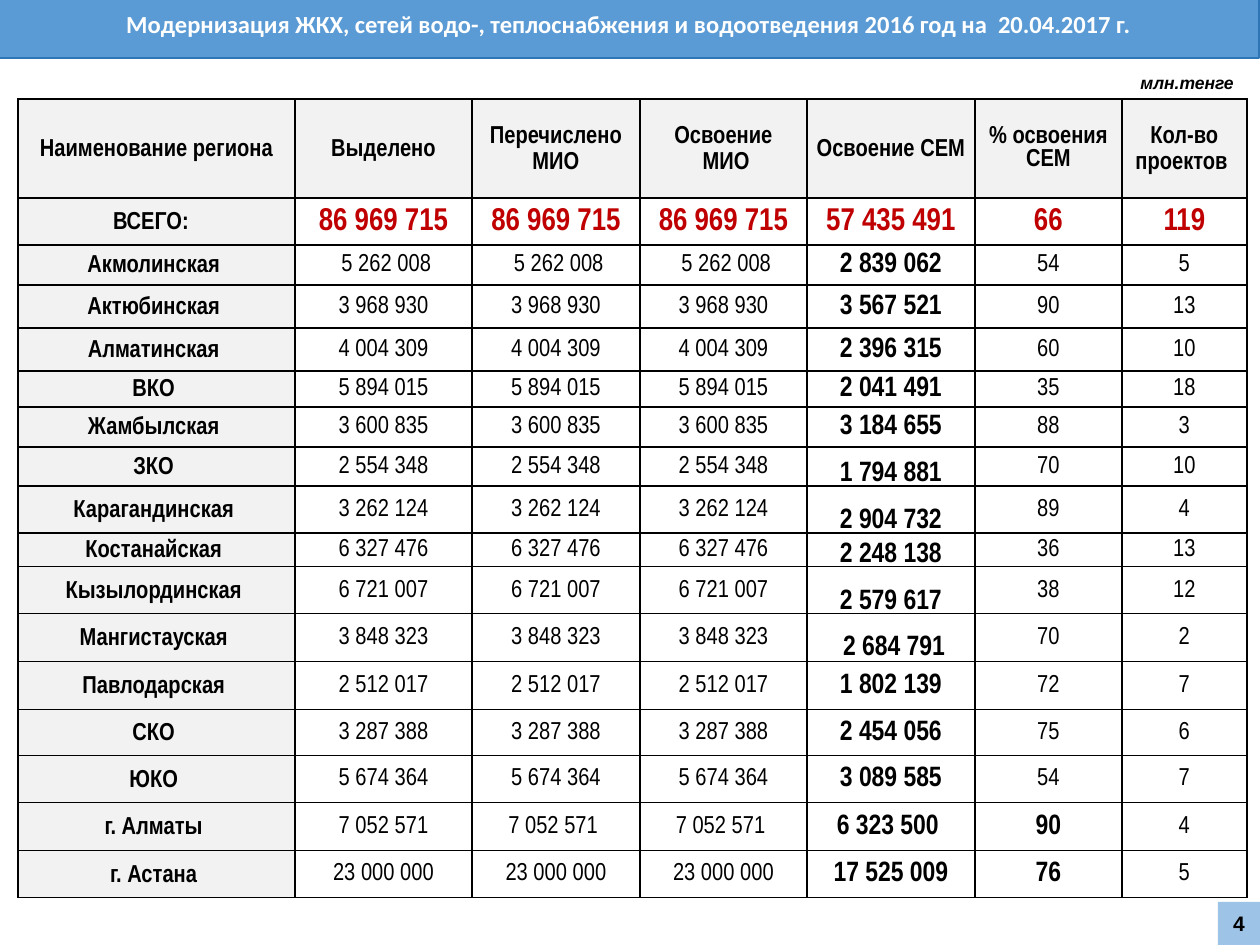
from copy import deepcopy
from dataclasses import dataclass

from lxml import etree
from pptx import Presentation, util as u
from pptx.dml.color import RGBColor
from pptx.enum import shapes, text
from pptx.oxml import ns

PX = u.Inches(1) / 126


@dataclass(frozen=True)
class Theme:
    title_fill: str = "5B9BD5"
    title_line: str = "2E75B6"
    number_fill: str = "9DC3E6"
    label_fill: str = "F2F2F2"
    white: str = "FFFFFF"
    black: str = "000000"
    red: str = "C00000"
    table_font: str = "Arial Narrow"
    note_font: str = "Arial"
    title_font: str = "Calibri"
    body: int = 14
    spent: int = 16
    total: int = 18
    number: int = 12
    note: int = 10


THEME = Theme()


@dataclass(frozen=True)
class Style:
    size: int = THEME.body
    color: str = THEME.black
    bold: bool = True
    italic: bool = False
    font: str = THEME.table_font
    fill: str = THEME.white
    line_spacing: float | None = None
    space_after: float | None = None
    inset: int = 1
    align: text.PP_ALIGN = text.PP_ALIGN.CENTER


@dataclass(frozen=True)
class Region:
    name: str
    height: int
    allocated: str
    spent: str
    percent: str
    projects: str
    transferred: str = ""
    low: bool = False         # spent amount sits at the cell bottom
    strong: bool = False      # percentage is emphasised
    tight: bool = True        # spent amount has reduced line spacing


LABEL = Style(fill=THEME.label_fill, line_spacing=1.15, inset=5)
HEADER_PLAIN = Style(fill=THEME.label_fill, inset=5)
TOTAL = Style(size=THEME.total, color=THEME.red)
VALUE = Style(bold=False)
SPENT = Style(size=THEME.spent, line_spacing=0.9, space_after=5.6)
SPENT_LOOSE = Style(size=THEME.spent)

COLUMNS = (277, 177, 168, 167, 168, 147, 125)
HEADER_HEIGHT, TOTAL_HEIGHT = 99, 47
HEADERS = ("Наименование региона", "Выделено", "Перечислено МИО", "Освоение\n МИО",
           "Освоение СЕМ", "% освоения СЕМ", "Кол-во проектов ")
TOTALS = ("86 969 715",) * 3 + ("57 435 491", "66", "119")
REGIONS = (
    Region("Акмолинская", 40, " 5 262 008", "2 839 062", "54", "5"),
    Region("Актюбинская", 43, "3 968 930", "3 567 521", "90", "13"),
    Region("Алматинская", 43, "4 004 309", "2 396 315", "60", "10"),
    Region("ВКО", 36, "5 894 015", "2 041 491", "35", "18"),
    Region("Жамбылская", 40, "3 600 835", "3 184 655", "88", "3"),
    Region("ЗКО", 39, "2 554 348", "1 794 881", "70", "10", low=True),
    Region("Карагандинская", 47, "3 262 124", "2 904 732", "89", "4", low=True),
    Region("Костанайская", 34, "6 327 476", "2 248 138", "36", "13", low=True),
    Region("Кызылординская", 47, "6 721 007", "2 579 617", "38", "12", low=True),
    Region("Мангистауская", 48, "3 848 323", " 2 684 791", "70", "2", low=True, tight=False),
    Region("Павлодарская", 48, "2 512 017", "1 802 139", "72", "7"),
    Region("СКО", 46, "3 287 388", "2 454 056", "75", "6"),
    Region("ЮКО", 47, "5 674 364", "3 089 585", "54", "7"),
    Region("г. Алматы", 48, "7 052 571", "6 323 500 ", "90", "4", "7 052 571 ", strong=True),
    Region("г. Астана", 47, "23 000 000", "17 525 009", "76", "5", strong=True),
)


def px(length: int) -> int:
    return round(length * PX)


def set_all(target, values: dict) -> None:
    for name, value in values.items():
        setattr(target, name, value)


def write(frame, words: str, style: Style) -> None:
    paragraph = frame.paragraphs[0]
    paragraph.text = words
    values = {"alignment": style.align, "line_spacing": style.line_spacing}
    if style.space_after is not None:
        values["space_after"] = u.Pt(style.space_after)
    set_all(paragraph, values)
    for run in paragraph.runs:
        set_all(run.font, {"name": style.font, "size": u.Pt(style.size),
                           "bold": style.bold, "italic": style.italic})
        run.font.color.rgb = RGBColor.from_string(style.color)
    # Line breaks take the size of the text around them
    for line_break in paragraph._p.findall(ns.qn("a:br")):
        line_break.append(deepcopy(paragraph.runs[0]._r.rPr))


def add_borders(cell) -> None:
    properties = cell._tc.get_or_add_tcPr()
    for index, side in enumerate(("lnL", "lnR", "lnT", "lnB")):
        line = etree.Element(ns.qn(f"a:{side}"), w=str(u.Pt(1)))
        fill = etree.SubElement(line, ns.qn("a:solidFill"))
        etree.SubElement(fill, ns.qn("a:srgbClr"), val=THEME.black)
        properties.insert(index, line)


def fill_cell(cell, words: str, style: Style, low: bool = False) -> None:
    anchor = text.MSO_ANCHOR.BOTTOM if low else text.MSO_ANCHOR.MIDDLE
    set_all(cell, {"margin_left": px(style.inset), "margin_right": px(style.inset),
                   "margin_top": px(style.inset % 5), "margin_bottom": 0,
                   "vertical_anchor": anchor})
    cell.fill.solid()
    cell.fill.fore_color.rgb = RGBColor.from_string(style.fill)
    add_borders(cell)
    write(cell.text_frame, words, style)


def add_region_table(slide, left: int, top: int) -> None:
    heights = (HEADER_HEIGHT, TOTAL_HEIGHT, *(region.height for region in REGIONS))
    table = slide.shapes.add_table(len(heights), len(COLUMNS), px(left), px(top),
                                   px(sum(COLUMNS)), px(sum(heights))).table
    set_all(table, {"first_row": False, "horz_banding": False})
    for column, width in zip(table.columns, COLUMNS):
        column.width = px(width)
    for row, height in zip(table.rows, heights):
        row.height = px(height)

    # Header and totals
    for column, words in enumerate(HEADERS):
        fill_cell(table.cell(0, column), words, HEADER_PLAIN if column == 5 else LABEL)
    fill_cell(table.cell(1, 0), "ВСЕГО:  ", LABEL)
    for column, words in enumerate(TOTALS, 1):
        fill_cell(table.cell(1, column), words, TOTAL)

    # One row per region
    for row, region in enumerate(REGIONS, 2):
        transferred = region.transferred or region.allocated
        entries = (
            (f"{region.name} ", LABEL),
            (region.allocated, VALUE),
            (transferred, VALUE),
            (transferred, VALUE),
            (region.spent, SPENT if region.tight else SPENT_LOOSE, region.low),
            (region.percent, SPENT if region.strong else VALUE),
            (region.projects, VALUE),
        )
        for column, entry in enumerate(entries):
            fill_cell(table.cell(row, column), *entry)


def add_box(slide, area: tuple[int, int, int, int], words: str, style: Style,
            line: str | None = None) -> None:
    shape = slide.shapes.add_shape(shapes.MSO_SHAPE.RECTANGLE, *map(px, area))
    shape.shadow.inherit = False
    shape.fill.solid()
    shape.fill.fore_color.rgb = RGBColor.from_string(style.fill)
    if line:
        shape.line.color.rgb = RGBColor.from_string(line)
        shape.line.width = u.Pt(1)
    else:
        shape.line.fill.background()
    shape.text_frame.vertical_anchor = text.MSO_ANCHOR.MIDDLE
    write(shape.text_frame, words, style)


def main() -> None:
    presentation = Presentation()
    set_all(presentation, {"slide_width": u.Inches(10), "slide_height": u.Inches(7.5)})
    slide = presentation.slides.add_slide(presentation.slide_layouts[6])

    add_region_table(slide, 18, 99)

    # Unit note
    note = slide.shapes.add_textbox(*map(px, (1126, 66, 120, 34))).text_frame
    set_all(note, {"word_wrap": False, "auto_size": text.MSO_AUTO_SIZE.SHAPE_TO_FIT_TEXT})
    write(note, "млн.тенге", Style(size=THEME.note, font=THEME.note_font, italic=True,
                                   align=text.PP_ALIGN.RIGHT))

    # Title band and slide number
    add_box(slide, (-1, -10, 1260, 68),
            "Модернизация ЖКХ, сетей водо-, теплоснабжения и водоотведения 2016 год на  20.04.2017 г.",
            Style(color=THEME.white, font=THEME.title_font, fill=THEME.title_fill),
            THEME.title_line)
    add_box(slide, (1218, 902, 42, 43), "4",
            Style(size=THEME.number, font=THEME.note_font, fill=THEME.number_fill))

    presentation.save("out.pptx")


if __name__ == "__main__":
    main()
